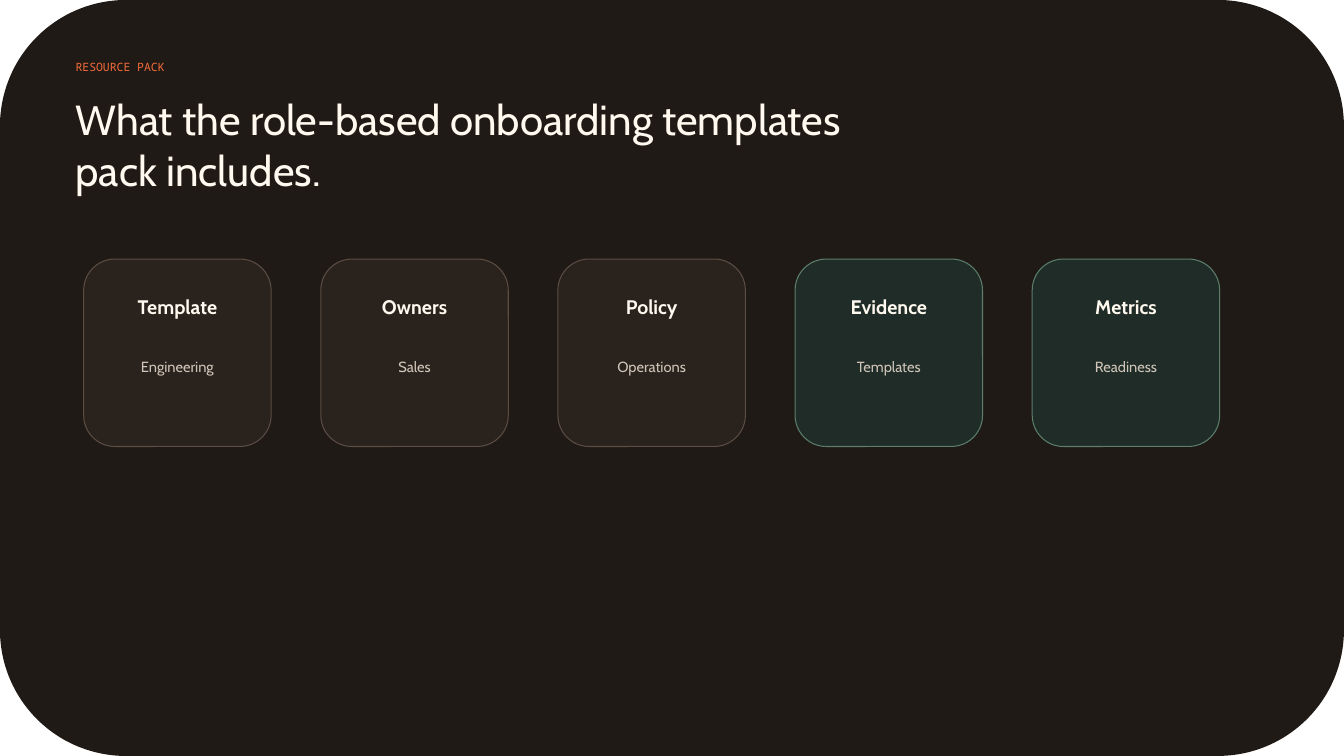
from dataclasses import dataclass

from pptx import Presentation
from pptx.dml.color import RGBColor
from pptx.enum.shapes import MSO_SHAPE
from pptx.enum.text import MSO_ANCHOR, PP_ALIGN
from pptx.util import Inches, Pt

COLUMNS, ROWS = 160, 90


@dataclass(frozen=True)
class TextStyle:
    font: str
    size: float
    color: str
    bold: bool = False
    align: PP_ALIGN = PP_ALIGN.LEFT


@dataclass(frozen=True)
class CardStyle:
    fill: str
    line: str


class Theme:
    backdrop = "201A16"
    line_width = 0.75
    eyebrow = TextStyle("Noto Sans Mono", 8.2, "F26B3A")
    headline = TextStyle("Cabin", 30, "FFF9EF")
    card_title = TextStyle("Cabin", 14, "FFF9EF", True, PP_ALIGN.CENTER)
    card_detail = TextStyle("Cabin", 10.5, "CFC4B8", False, PP_ALIGN.CENTER)
    brown = CardStyle("2A221D", "5B4D44")
    green = CardStyle("1F2C27", "5C7E6B")


class SlideBuilder:
    """Places elements on a page, measured in grid columns and rows."""

    def __init__(self, deck, theme):
        self.theme = theme
        self.page = deck.slides.add_slide(deck.slide_layouts[6])
        self.column = deck.slide_width / COLUMNS
        self.row = deck.slide_height / ROWS

    def place(self, left, top, width, height):
        """Turn grid units into slide lengths."""
        return (round(left * self.column), round(top * self.row),
                round(width * self.column), round(height * self.row))

    def panel(self, area, fill, line=None):
        shape = self.page.shapes.add_shape(
            MSO_SHAPE.ROUNDED_RECTANGLE, *self.place(*area))
        shape.shadow.inherit = False
        shape.fill.solid()
        shape.fill.fore_color.rgb = RGBColor.from_string(fill)
        if line:
            shape.line.color.rgb = RGBColor.from_string(line)
            shape.line.width = Pt(self.theme.line_width)
        else:
            shape.line.fill.background()

    def text(self, area, words, style):
        frame = self.page.shapes.add_textbox(*self.place(*area)).text_frame
        frame.word_wrap = True
        frame.vertical_anchor = MSO_ANCHOR.TOP
        frame.margin_left = frame.margin_right = 0
        frame.margin_top = frame.margin_bottom = 0
        para = frame.paragraphs[0]
        para.alignment = style.align
        span = para.add_run()
        span.text = words
        span.font.name = style.font
        span.font.size = Pt(style.size)
        span.font.bold = style.bold
        span.font.color.rgb = RGBColor.from_string(style.color)

    def card(self, left, top, size, title, detail, style):
        self.panel((left, top, size, size), style.fill, style.line)
        self.text((left + 2.23, top + 4.32, 17.88, 3.96),
                  title, self.theme.card_title)
        self.text((left + 1.86, top + 11.76, 18.6, 6.84),
                  detail, self.theme.card_detail)


def main():
    deck = Presentation()
    deck.slide_width, deck.slide_height = Inches(13.33), Inches(7.5)
    theme = Theme()
    builder = SlideBuilder(deck, theme)

    builder.panel((0, 0, COLUMNS, ROWS), theme.backdrop)
    builder.text((9, 7.2, 55.08, 3.36), "RESOURCE PACK", theme.eyebrow)
    builder.text((9, 11.16, 99.72, 8.52),
                 "What the role-based onboarding templates pack includes.",
                 theme.headline)

    cards = [
        ("Template", "Engineering", theme.brown),
        ("Owners", "Sales", theme.brown),
        ("Policy", "Operations", theme.brown),
        ("Evidence", "Templates", theme.green),
        ("Metrics", "Readiness", theme.green),
    ]
    first_left, top, size, pitch = 9.96, 30.84, 22.32, 28.23
    for index, (title, detail, style) in enumerate(cards):
        builder.card(first_left + index * pitch, top, size, title, detail, style)

    deck.save("out.pptx")


if __name__ == "__main__":
    main()
